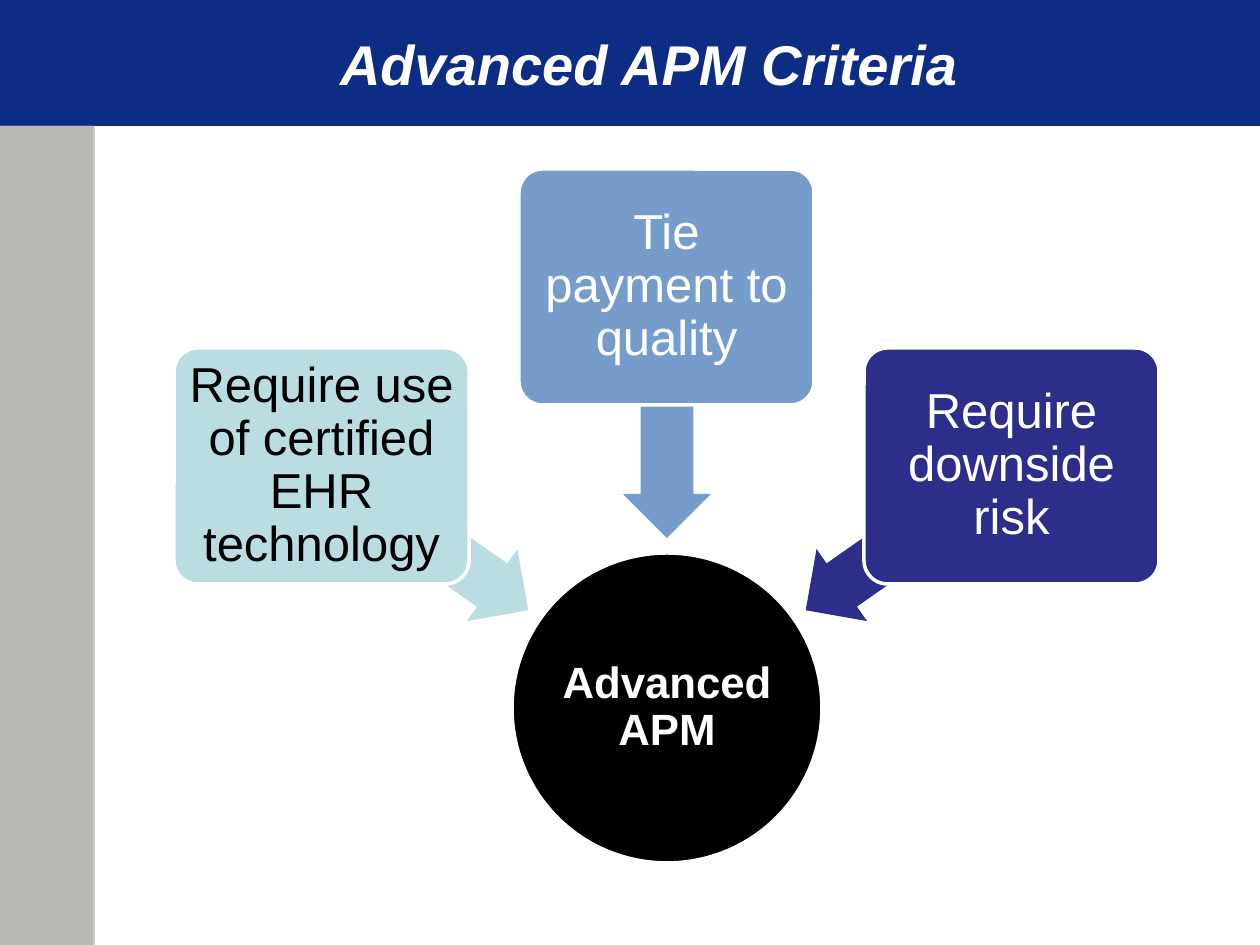
from dataclasses import dataclass

from pptx import Presentation
from pptx.dml.color import RGBColor
from pptx.enum.shapes import MSO_SHAPE
from pptx.enum.text import MSO_ANCHOR, MSO_AUTO_SIZE, PP_ALIGN
from pptx.util import Pt

RECTANGLE = MSO_SHAPE.RECTANGLE
ROUNDED = MSO_SHAPE.ROUNDED_RECTANGLE
OVAL = MSO_SHAPE.OVAL
LEFT_ARROW = MSO_SHAPE.LEFT_ARROW
MIDDLE = MSO_ANCHOR.MIDDLE
CENTER = PP_ALIGN.CENTER
NO_AUTOFIT = MSO_AUTO_SIZE.NONE

EMU_PER_PX = 914400 / 126
FONT = "Arial"
WHITE = "FFFFFF"
BLACK = "000000"
BOX_WIDTH, BOX_HEIGHT = 295, 236
ARROW_WIDTH, ARROW_HEIGHT = 252, 88


@dataclass
class Band:
    top: int
    width: int
    height: int
    fill: str


@dataclass
class Criterion:
    text: str
    box_left: int
    box_top: int
    arrow_left: int
    arrow_top: int
    rotation: int
    fill: str
    ink: str


BANDS = [
    Band(0, 1260, 126, "0C2D83"),
    Band(126, 95, 819, "CCCCCC"),
    Band(126, 93, 819, "B7BAB5"),
]
CRITERIA = [
    Criterion("Require use of certified EHR technology",
              174, 348, 299, 494, 215, "BADDE1", BLACK),
    Criterion("Tie payment to quality",
              519, 169, 541, 368, 270, "759CCB", WHITE),
    Criterion("Require downside risk",
              864, 348, 783, 494, 325, "2D2D8A", WHITE),
]


def px(length: int) -> int:
    return round(length * EMU_PER_PX)


def color(value: str) -> RGBColor:
    return RGBColor.from_string(value)


def add_figure(page, kind, left: int, top: int, width: int, height: int,
               fill: str, outlined: bool = False):
    figure = page.shapes.add_shape(kind, px(left), px(top), px(width), px(height))
    figure.shadow.inherit = False
    figure.fill.solid()
    figure.fill.fore_color.rgb = color(fill)
    if outlined:
        figure.line.color.rgb = color(WHITE)
        figure.line.width = Pt(2)
    else:
        figure.line.fill.background()
    return figure


def write(figure, text: str, size: int, ink: str, inset: int,
          bold: bool = False, italic: bool = False):
    frame = figure.text_frame
    frame.text = text
    frame.word_wrap = True
    frame.auto_size = NO_AUTOFIT
    frame.vertical_anchor = MIDDLE
    frame.margin_left = frame.margin_right = px(inset)
    frame.margin_top = frame.margin_bottom = px(inset)
    para = frame.paragraphs[0]
    para.alignment = CENTER
    for span in para.runs:
        span.font.name = FONT
        span.font.size = Pt(size)
        span.font.bold = bold
        span.font.italic = italic
        span.font.color.rgb = color(ink)
    return frame


def add_criterion(page, item: Criterion) -> None:
    arrow = add_figure(page, LEFT_ARROW, item.arrow_left, item.arrow_top,
                       ARROW_WIDTH, ARROW_HEIGHT, item.fill)
    arrow.adjustments[0] = 0.6
    arrow.adjustments[1] = 0.5
    arrow.rotation = item.rotation
    box = add_figure(page, ROUNDED, item.box_left, item.box_top,
                     BOX_WIDTH, BOX_HEIGHT, item.fill, outlined=True)
    box.adjustments[0] = 0.1
    frame = write(box, item.text, 28, item.ink, 7)
    frame.paragraphs[0].line_spacing = 0.9


def main() -> None:
    deck = Presentation()
    deck.slide_width, deck.slide_height = px(1260), px(945)
    page = deck.slides.add_slide(deck.slide_layouts[5])

    # Header and side bands, kept behind the title
    title = page.shapes.title
    for band in BANDS:
        figure = add_figure(page, RECTANGLE, 0, band.top, band.width,
                            band.height, band.fill)
        title.element.addprevious(figure.element)

    # Title, set slightly left of its box centre
    title.left, title.top = px(95), px(0)
    title.width, title.height = px(1124), px(126)
    frame = write(title, "Advanced APM Criteria", 32, WHITE, 12,
                  bold=True, italic=True)
    frame.margin_right = px(28)

    # Central goal
    goal = add_figure(page, OVAL, 512, 553, 310, 310, BLACK, outlined=True)
    frame = write(goal, "Advanced APM", 25, WHITE, 2, bold=True)
    frame.paragraphs[0].line_spacing = 0.9

    # Criteria pointing at the goal
    for item in CRITERIA:
        add_criterion(page, item)

    deck.save("out.pptx")


if __name__ == "__main__":
    main()
